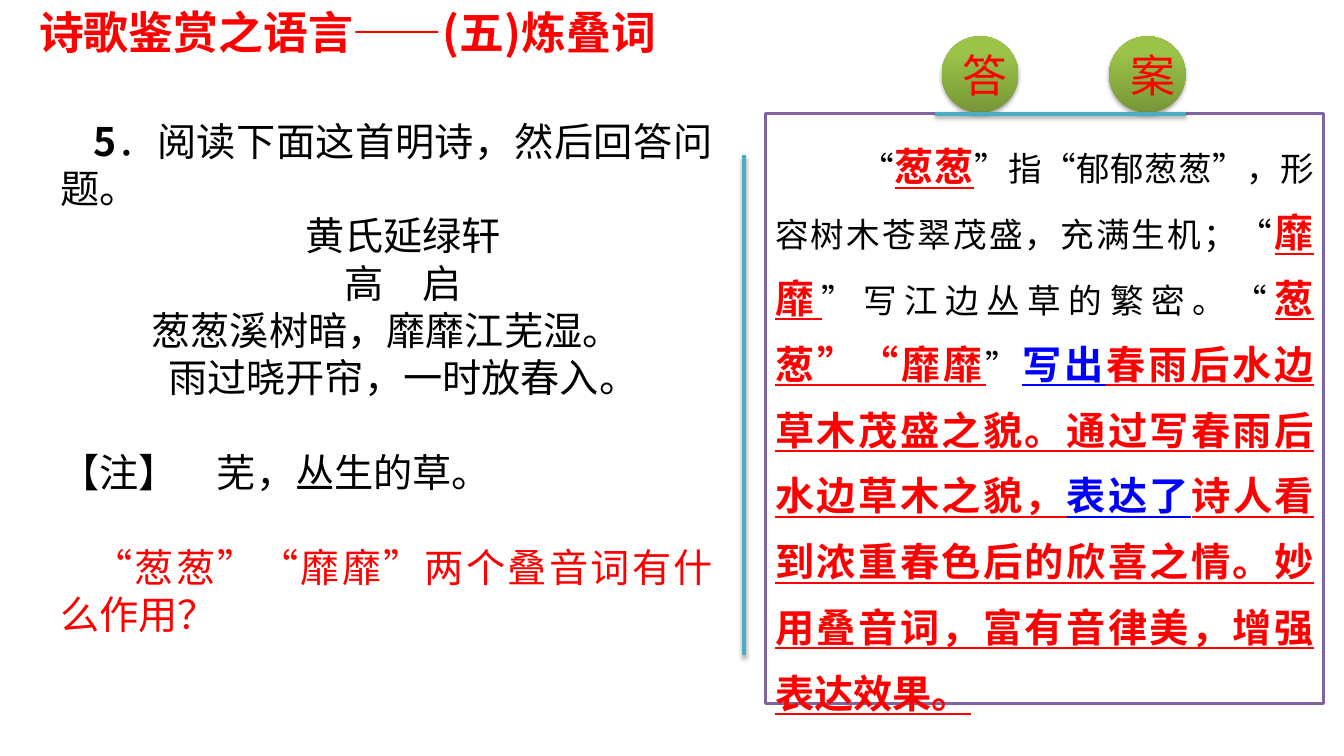
from lxml.etree import SubElement
from pptx import Presentation
from pptx.dml.color import RGBColor
from pptx.enum.shapes import MSO_CONNECTOR, MSO_SHAPE
from pptx.enum.text import MSO_ANCHOR, PP_ALIGN
from pptx.oxml.ns import qn
from pptx.util import Inches, Pt

WIDTH, HEIGHT = 13.33, 7.5
FONT = "Noto Sans CJK SC"
COLORS = {
    "red": "FF0000", "blue": "0000FF", "black": "000000", "white": "FFFFFF",
    "teal": "4BACC6", "purple": "8064A2", "dark green": "779737", "green": "9BC348",
}
BODY_LINE, ANSWER_LINE, HEADING_LINE = 33.8, 47, 38.4
INDENT = 0.33

# Run styles: size, colour, bold, underline
STYLES = {
    "heading": (32, "red", True, False),
    "badge": (32, "red", False, False),
    "body": (28, "black", False, False),
    "number": (28, "black", True, False),
    "question": (28, "red", False, False),
    "plain": (24, "black", False, False),
    "key": (28, "red", True, True),
    "verb": (28, "blue", True, True),
}

TITLE = [("诗歌鉴赏之语言——(五)炼叠词", "heading")]

# Runs, alignment, first-line indent, blank lines above
EXERCISE = [
    ([("5", "number"), ("．阅读下面这首明诗，然后回答问题。", "body")], "JUSTIFY", INDENT, 0),
    ([("黄氏延绿轩", "body")], "CENTER", INDENT, 0),
    ([("高　启", "body")], "CENTER", INDENT, 0),
    ([("葱葱溪树暗，靡靡江芜湿。", "body")], "CENTER", 0, 0),
    ([("雨过晓开帘，一时放春入。", "body")], "CENTER", INDENT, 0),
    ([("【注】　芜，丛生的草。", "body")], "JUSTIFY", 0, 1),
    ([("“葱葱”“靡靡”两个叠音词有什么作用？", "question")], "JUSTIFY", INDENT, 1),
]

ANSWER = [
    ("“", "plain"), ("葱葱", "key"),
    ("”指“郁郁葱葱”，形容树木苍翠茂盛，充满生机；“", "plain"),
    ("靡靡", "key"), ("”写江边丛草的繁密。“", "plain"),
    ("葱葱”“靡靡", "key"), ("”", "plain"), ("写出", "verb"),
    ("春雨后水边草木茂盛之貌。通过写春雨后水边草木之貌，", "key"),
    ("表达了", "verb"),
    ("诗人看到浓重春色后的欣喜之情。妙用叠音词，富有音律美，增强表达效果。", "key"),
]

BADGES = "答案"
BADGE_LEFT, BADGE_TOP, BADGE_SIZE, BADGE_STEP = 9.34, 0.36, 0.76, 1.66
PANEL_LEFT, PANEL_TOP, PANEL_WIDTH, PANEL_HEIGHT = 7.59, 1.13, 5.54, 5.85
RULES = [((7.38, 1.54), (7.38, 6.5)), ((9.27, PANEL_TOP), (11.76, PANEL_TOP))]


def color(name):
    return RGBColor.from_string(COLORS[name])


def write(paragraph, runs, align="LEFT", line=HEADING_LINE, indent=0, before=0):
    paragraph.alignment = getattr(PP_ALIGN, align)
    paragraph.line_spacing = Pt(line)
    paragraph.space_before = Pt(before)
    if indent:
        properties = paragraph._p.get_or_add_pPr()
        properties.set("marL", "0")
        properties.set("indent", str(Inches(indent)))
    for text, style in runs:
        run = paragraph.add_run()
        run.text = text
        font = run.font
        size, color_name, font.bold, font.underline = STYLES[style]
        font.size = Pt(size)
        font.color.rgb = color(color_name)
        font.name = FONT
        SubElement(font._element, qn("a:ea"), typeface=FONT)


def add_shadow(shape):
    """Give a shape whose line is already set a soft shadow below it."""
    effects = SubElement(shape._element.spPr, qn("a:effectLst"))
    shadow = SubElement(effects, qn("a:outerShdw"), blurRad=str(Pt(3.1)),
                        dist=str(Pt(1.8)), dir="5400000", rotWithShape="0")
    shade = SubElement(shadow, qn("a:srgbClr"), val=COLORS["black"])
    SubElement(shade, qn("a:alpha"), val="35000")


def add_text_box(slide, left, top, width, height):
    frame = slide.shapes.add_textbox(*map(Inches, (left, top, width, height))).text_frame
    frame.word_wrap = True
    return frame


def add_rule(slide, start, end):
    rule = slide.shapes.add_connector(MSO_CONNECTOR.STRAIGHT, *map(Inches, start + end))
    rule.line.color.rgb = color("teal")
    rule.line.width = Pt(3)
    add_shadow(rule)


def add_panel(slide):
    panel = slide.shapes.add_shape(MSO_SHAPE.RECTANGLE, *map(
        Inches, (PANEL_LEFT, PANEL_TOP, PANEL_WIDTH, PANEL_HEIGHT)))
    panel.shadow.inherit = False
    panel.fill.solid()
    panel.fill.fore_color.rgb = color("white")
    panel.line.color.rgb = color("purple")
    panel.line.width = Pt(2)
    frame = panel.text_frame
    frame.word_wrap = True
    frame.vertical_anchor = MSO_ANCHOR.TOP
    frame.margin_top = Inches(0.1)
    write(frame.paragraphs[0], ANSWER, align="JUSTIFY", line=ANSWER_LINE, indent=0.85)


def add_badge(slide, index, character):
    badge = slide.shapes.add_shape(MSO_SHAPE.OVAL, *map(
        Inches, (BADGE_LEFT + index * BADGE_STEP, BADGE_TOP, BADGE_SIZE, BADGE_SIZE)))
    badge.fill.gradient()
    badge.fill.gradient_angle = 90
    stops = zip(badge.fill.gradient_stops, ("dark green", "green"), (0, 0.8))
    for stop, name, position in stops:
        stop.color.rgb = color(name)
        stop.position = position
    badge.line.fill.background()
    add_shadow(badge)
    frame = badge.text_frame
    frame.word_wrap = True
    frame.vertical_anchor = MSO_ANCHOR.MIDDLE
    write(frame.paragraphs[0], [(character, "badge")], align="CENTER")


def main():
    presentation = Presentation()
    presentation.slide_width = Inches(WIDTH)
    presentation.slide_height = Inches(HEIGHT)
    slide = presentation.slides.add_slide(presentation.slide_layouts[6])

    write(add_text_box(slide, 0.29, 0, 7.09, 0.64).paragraphs[0], TITLE)
    add_rule(slide, *RULES[0])

    exercise = add_text_box(slide, 0.5, 1.11, 6.67, 5.28)
    for index, (runs, align, indent, blank_lines) in enumerate(EXERCISE):
        paragraph = exercise.add_paragraph() if index else exercise.paragraphs[0]
        write(paragraph, runs, align=align, line=BODY_LINE, indent=indent,
              before=blank_lines * BODY_LINE)

    add_panel(slide)
    for index, character in enumerate(BADGES):
        add_badge(slide, index, character)
    add_rule(slide, *RULES[1])
    presentation.save("out.pptx")


if __name__ == "__main__":
    main()
